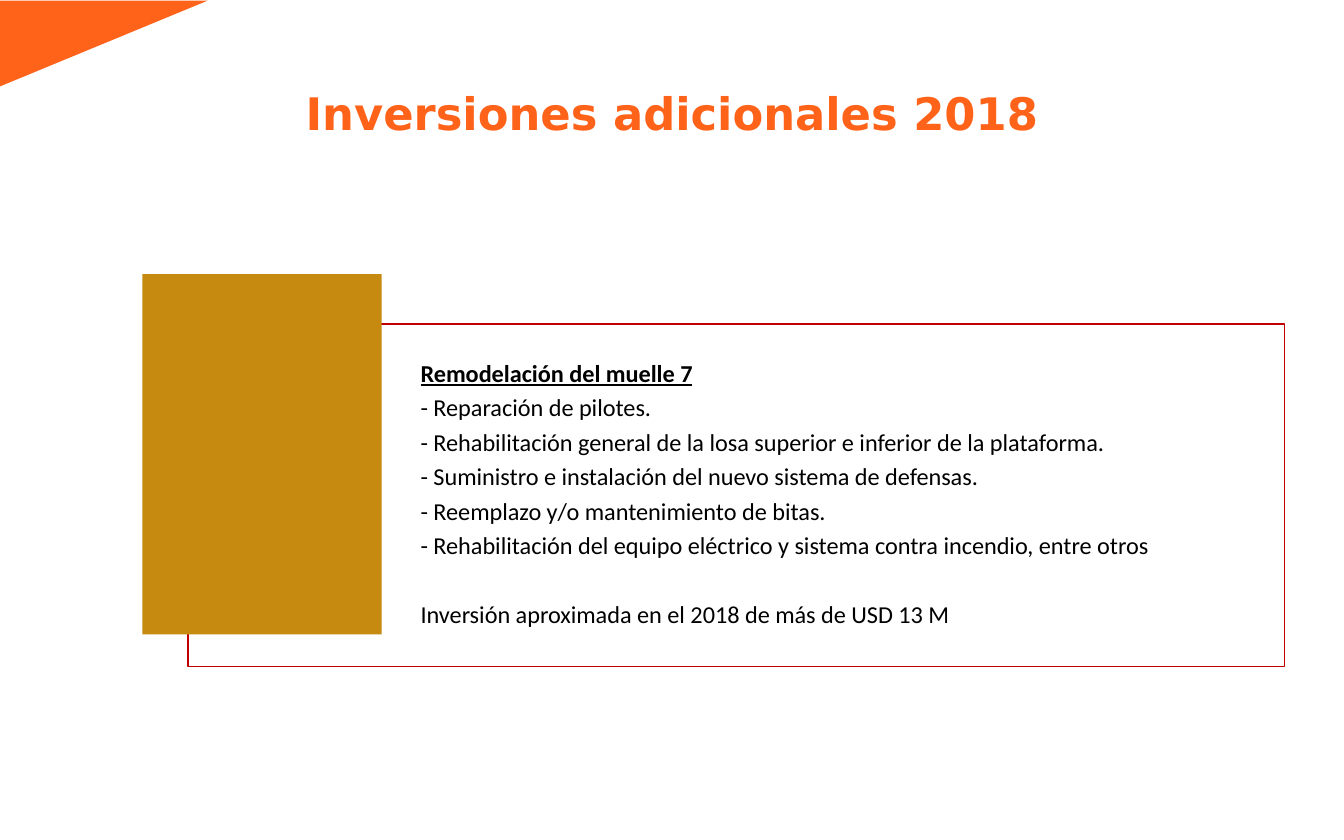
from typing import NamedTuple, Optional

from pptx import Presentation
from pptx.dml.color import RGBColor
from pptx.enum.shapes import MSO_SHAPE
from pptx.enum.text import MSO_ANCHOR, PP_ALIGN
from pptx.util import Inches, Pt

ORANGE, GOLD, RED, BLACK = "FF6319", "C68A10", "C00000", "000000"
HEAD = "Remodelación del muelle 7"
WORKS = [
    "- Reparación de pilotes.",
    "- Rehabilitación general de la losa superior e inferior de la plataforma.",
    "- Suministro e instalación del nuevo sistema de defensas.",
    "- Reemplazo y/o mantenimiento de bitas.",
    "- Rehabilitación del equipo eléctrico y sistema contra incendio, entre otros",
]
COST = "Inversión aproximada en el 2018 de más de USD 13 M"
GAP, BREAK = Pt(4.4), Pt(18.7)


class Block(NamedTuple):
    kind: MSO_SHAPE
    left: float
    top: float
    width: float
    height: float
    fill: Optional[str] = None
    line: Optional[str] = None
    turn: float = 0


CORNER = Block(MSO_SHAPE.RIGHT_TRIANGLE, 0.45, -0.45, 0.64, 1.55, fill=ORANGE, turn=90)
FRAME = Block(MSO_SHAPE.RECTANGLE, 1.4, 2.41, 8.16, 2.55, line=RED)
PANEL = Block(MSO_SHAPE.RECTANGLE, 1.06, 2.04, 1.78, 2.68, fill=GOLD)


def color(code: str) -> RGBColor:
    return RGBColor.from_string(code)


def draw(slide, block: Block):
    shape = slide.shapes.add_shape(
        block.kind, Inches(block.left), Inches(block.top),
        Inches(block.width), Inches(block.height))
    shape.shadow.inherit = False
    shape.rotation = block.turn
    if block.fill:
        shape.fill.solid()
        shape.fill.fore_color.rgb = color(block.fill)
    else:
        shape.fill.background()
    if block.line:
        shape.line.color.rgb = color(block.line)
        shape.line.width = Pt(0.75)
    else:
        shape.line.fill.background()
    return shape


def inset(frame, left: float, rest: float, anchor: MSO_ANCHOR) -> None:
    """Wrap the text and set its margins and vertical anchor."""
    frame.word_wrap = True
    frame.vertical_anchor = anchor
    frame.margin_left = Inches(left)
    frame.margin_top = frame.margin_right = frame.margin_bottom = Inches(rest)


def style(para, face: str, size: float, code: str, bold: bool, align: PP_ALIGN) -> None:
    para.alignment = align
    para.line_spacing = 0.9
    for run in para.runs:
        run.font.name = face
        run.font.size = Pt(size)
        run.font.bold = bold
        run.font.color.rgb = color(code)


def add_title(slide, text: str) -> None:
    box = slide.shapes.add_textbox(Inches(0.75), Inches(0.21), Inches(8.5), Inches(0.83))
    inset(box.text_frame, 0, 0, MSO_ANCHOR.BOTTOM)
    box.text_frame.text = text
    style(box.text_frame.paragraphs[0], "DejaVu Sans", 24, ORANGE, True, PP_ALIGN.CENTER)


def add_works(slide) -> None:
    frame = draw(slide, FRAME).text_frame
    inset(frame, 1.73, 0.05, MSO_ANCHOR.MIDDLE)
    frame.text = "\n".join([HEAD, *WORKS, COST])
    paras = frame.paragraphs
    for para in paras:
        style(para, "Calibri", 13, BLACK, para.text == HEAD, PP_ALIGN.LEFT)
        para.space_after = GAP
    paras[0].runs[0].font.underline = True
    paras[-1].space_before = BREAK


def main() -> None:
    deck = Presentation()
    deck.slide_width, deck.slide_height = Inches(10), Inches(6.25)
    slide = deck.slides.add_slide(deck.slide_layouts[6])
    draw(slide, CORNER)
    add_title(slide, "Inversiones adicionales 2018")
    add_works(slide)
    draw(slide, PANEL)
    deck.save("out.pptx")


if __name__ == "__main__":
    main()
